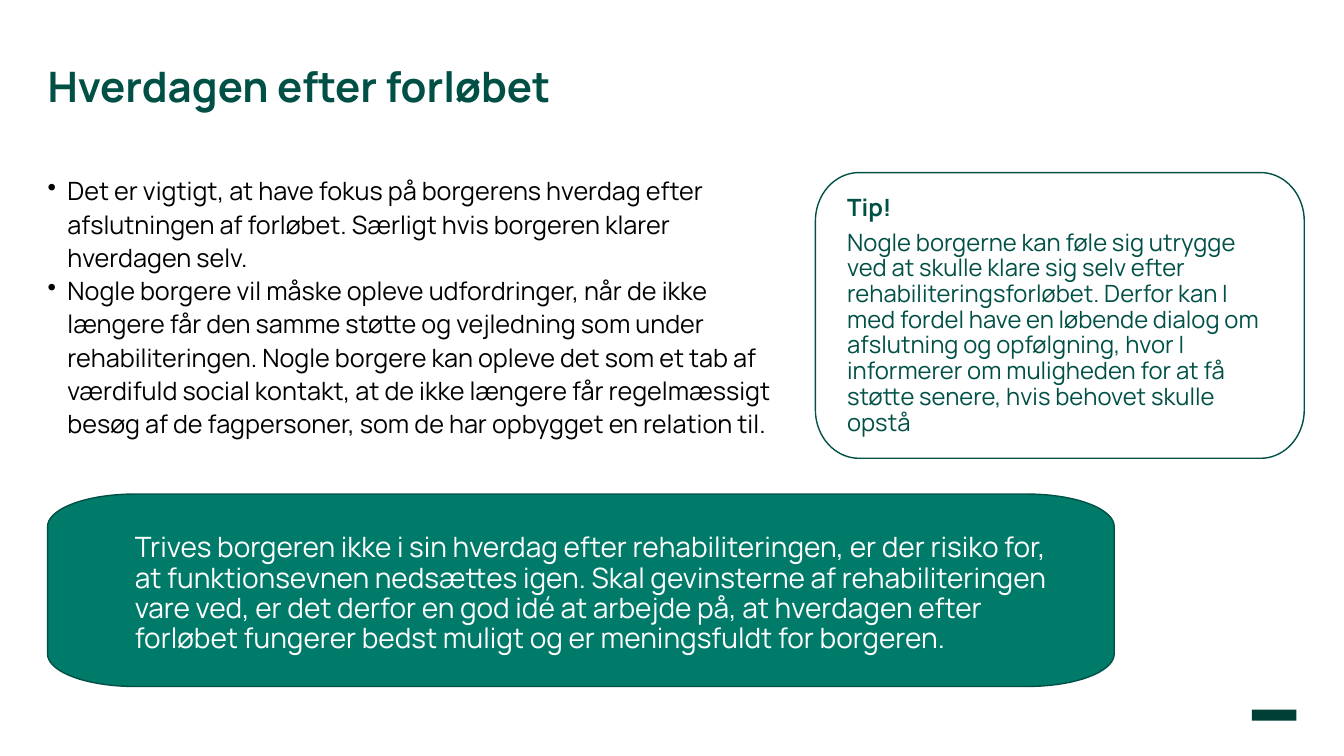
from math import cos, radians, sin

from lxml.etree import SubElement
from pptx import Presentation
from pptx.dml.color import RGBColor
from pptx.enum.shapes import MSO_SHAPE
from pptx.enum.text import MSO_ANCHOR, PP_ALIGN
from pptx.oxml.ns import qn
from pptx.util import Cm, Pt

FONT = "Manrope"
BLACK = RGBColor(0x00, 0x00, 0x00)
WHITE = RGBColor(0xFF, 0xFF, 0xFF)
DARK_GREEN = RGBColor(0x00, 0x50, 0x45)
GREEN = RGBColor(0x00, 0x7B, 0x6A)
MARK_GREEN = RGBColor(0x00, 0x3F, 0x36)

LEFT = 1.2
CONTENT_TOP = 4.35
CONTENT_HEIGHT = 7.2

TITLE = "Hverdagen efter forløbet"
POINTS = [
    "Det er vigtigt, at have fokus på borgerens hverdag efter afslutningen af "
    "forløbet. Særligt hvis borgeren klarer hverdagen selv.",
    "Nogle borgere vil måske opleve udfordringer, når de ikke længere får den "
    "samme støtte og vejledning som under rehabiliteringen. Nogle borgere kan "
    "opleve det som et tab af værdifuld social kontakt, at de ikke længere får "
    "regelmæssigt besøg af de fagpersoner, som de har opbygget en relation til.",
]
TIP_HEADING = "Tip!"
TIP = (
    "Nogle borgerne kan føle sig utrygge ved at skulle klare sig selv efter "
    "rehabiliteringsforløbet. Derfor kan I med fordel have en løbende dialog om "
    "afslutning og opfølgning, hvor I informerer om muligheden for at få støtte "
    "senere, hvis behovet skulle opstå"
)
CONCLUSION = (
    "Trives borgeren ikke i sin hverdag efter rehabiliteringen, er der risiko for, "
    "at funktionsevnen nedsættes igen. Skal gevinsterne af rehabiliteringen vare "
    "ved, er det derfor en god idé at arbejde på, at hverdagen efter forløbet "
    "fungerer bedst muligt og er meningsfuldt for borgeren."
)


def write(frame, text, *, size, color, spacing, bold=False, bullet=False, after=0):
    """Fill the frame's empty first paragraph, or add a paragraph after the others."""
    first = frame.paragraphs[0]
    paragraph = frame.add_paragraph() if first.runs else first
    paragraph.alignment = PP_ALIGN.LEFT
    paragraph.line_spacing = spacing
    paragraph.space_after = Pt(after)
    if bullet:
        properties = paragraph._p.get_or_add_pPr()
        properties.set("marL", str(Cm(0.5)))
        properties.set("indent", str(Cm(-0.5)))
        SubElement(properties, qn("a:buChar"), char="•")
    run = paragraph.add_run()
    run.text = text
    run.font.name = FONT
    run.font.size = Pt(size)
    run.font.bold = bold
    run.font.color.rgb = color


def prepare_frame(frame, left=0, top=0, right=0, bottom=0):
    frame.word_wrap = True
    frame.vertical_anchor = MSO_ANCHOR.TOP
    frame.margin_left, frame.margin_top = Cm(left), Cm(top)
    frame.margin_right, frame.margin_bottom = Cm(right), Cm(bottom)
    return frame


def add_text_frame(slide, box):
    return prepare_frame(slide.shapes.add_textbox(*map(Cm, box)).text_frame)


def add_rounded_panel(slide, box, radius_x, radius_y, fill):
    """Draw a panel whose corners are quarter ellipses."""
    left, top, width, height = box
    near_x, far_x = left + radius_x, left + width - radius_x
    near_y, far_y = top + radius_y, top + height - radius_y
    centres = [(near_x, near_y), (far_x, near_y), (far_x, far_y), (near_x, far_y)]
    outline = [
        (Cm(x + radius_x * cos(radians(angle))), Cm(y + radius_y * sin(radians(angle))))
        for corner, (x, y) in enumerate(centres)
        for angle in range(180 + 90 * corner, 271 + 90 * corner, 5)
    ]
    builder = slide.shapes.build_freeform(*outline[0])
    builder.add_line_segments(outline[1:], close=True)
    panel = builder.convert_to_shape()
    panel.shadow.inherit = False
    panel.fill.solid()
    panel.fill.fore_color.rgb = fill
    panel.line.color.rgb = DARK_GREEN
    panel.line.width = Pt(1)
    return panel


def add_title(slide, box):
    write(add_text_frame(slide, box), TITLE, size=30, color=DARK_GREEN,
          spacing=0.83, bold=True)


def add_points(slide, box):
    frame = add_text_frame(slide, box)
    for point in POINTS:
        write(frame, point, size=18, color=BLACK, spacing=1.1, bullet=True)


def add_tip(slide, box):
    panel = add_rounded_panel(slide, box, 1.1, 1.22, WHITE)
    frame = prepare_frame(panel.text_frame, 0.8, 0.6, 0.8, 0.6)
    for text, bold in ((TIP_HEADING, True), (TIP, False)):
        write(frame, text, size=17, color=DARK_GREEN, spacing=0.9, bold=bold, after=6)


def add_conclusion(slide, box):
    panel = add_rounded_panel(slide, box, 2.2, 0.82, GREEN)
    frame = prepare_frame(panel.text_frame, 2.2, 1, 1, 1)
    write(frame, CONCLUSION, size=20, color=WHITE, spacing=0.9)


def add_corner_mark(slide, box):
    mark = slide.shapes.add_shape(MSO_SHAPE.RECTANGLE, *map(Cm, box))
    mark.shadow.inherit = False
    mark.fill.solid()
    mark.fill.fore_color.rgb = MARK_GREEN
    mark.line.fill.background()


def main():
    presentation = Presentation()
    presentation.slide_width, presentation.slide_height = Cm(33.87), Cm(19.05)
    slide = presentation.slides.add_slide(presentation.slide_layouts[6])
    add_corner_mark(slide, (31.55, 17.88, 1.12, 0.28))
    add_points(slide, (LEFT, CONTENT_TOP, 18.5, CONTENT_HEIGHT))
    add_title(slide, (LEFT, 1.75, 23.34, 2.6))
    add_conclusion(slide, (LEFT, 12.45, 26.88, 4.85))
    add_tip(slide, (20.55, CONTENT_TOP, 12.32, CONTENT_HEIGHT))
    presentation.save("out.pptx")


if __name__ == "__main__":
    main()
